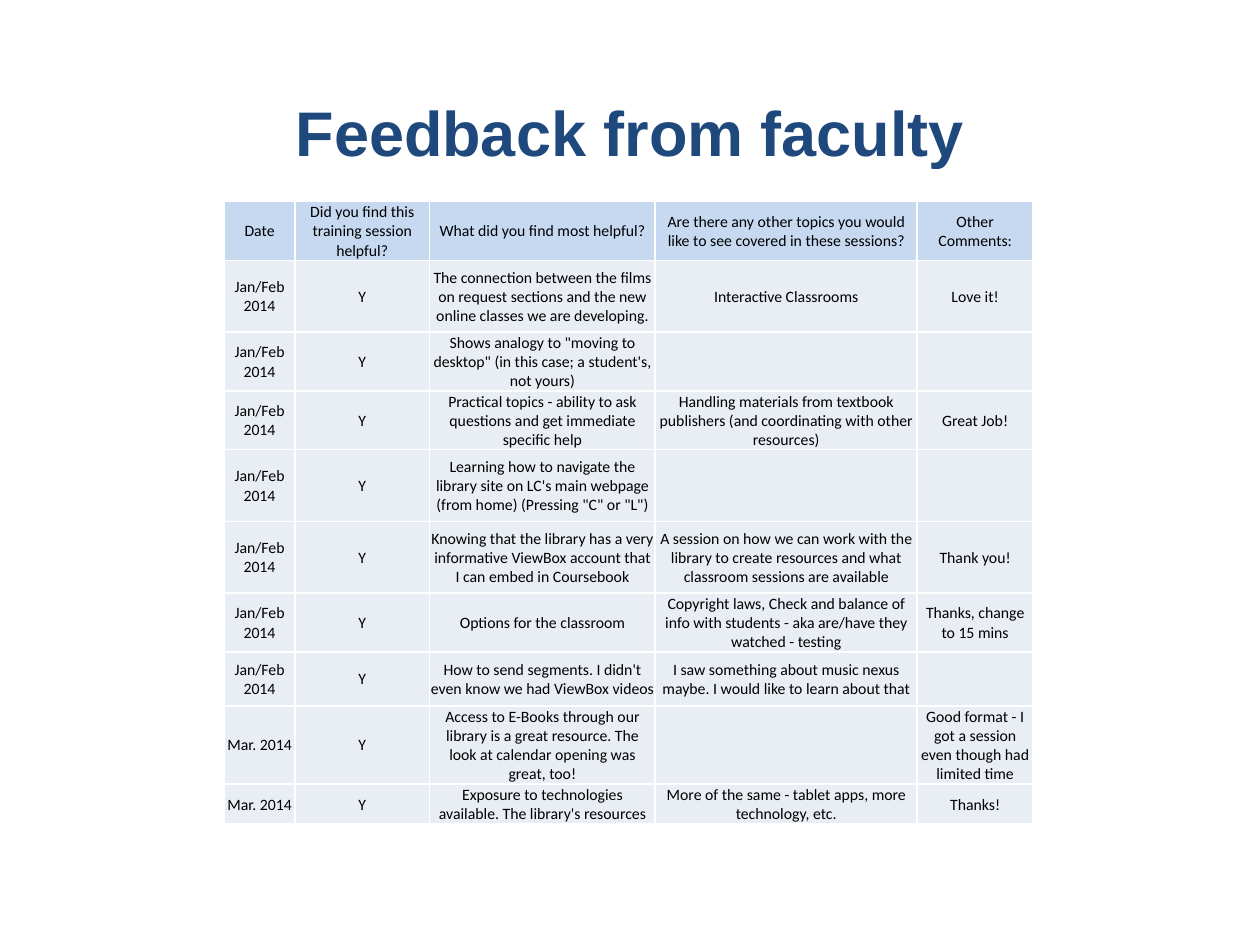
from dataclasses import dataclass

from lxml.etree import SubElement
from pptx import Presentation
from pptx.dml.color import RGBColor
from pptx.enum.text import MSO_ANCHOR, PP_ALIGN
from pptx.oxml.ns import qn
from pptx.slide import Slide
from pptx.util import Inches, Pt

HEADINGS = [
    "Date",
    "Did you find this training session helpful?",
    "What did you find most helpful?",
    "Are there any other topics you would like to see covered in these sessions?",
    "Other Comments:",
]
WINTER, SPRING = "Jan/Feb 2014", "Mar. 2014"
RESPONSES = [
    (WINTER, "The connection between the films on request sections and the new online classes we are developing.",
     "Interactive Classrooms", "Love it!"),
    (WINTER, "Shows analogy to \"moving to desktop\" (in this case; a student's, not yours)", "", ""),
    (WINTER, "Practical topics - ability to ask questions and get immediate specific help",
     "Handling materials from textbook publishers (and coordinating with other resources)", "Great Job!"),
    (WINTER, "Learning how to navigate the library site on LC's main webpage (from home) (Pressing \"C\" or \"L\")",
     "", ""),
    (WINTER, "Knowing that the library has a very informative ViewBox account that I can embed in Coursebook",
     "A session on how we can work with the library to create resources and what classroom sessions are available",
     "Thank you!"),
    (WINTER, "Options for the classroom",
     "Copyright laws, Check and balance of info with students - aka are/have they watched - testing",
     "Thanks, change to 15 mins"),
    (WINTER, "How to send segments. I didn't even know we had ViewBox videos",
     "I saw something about music nexus maybe. I would like to learn about that", ""),
    (SPRING, "Access to E-Books through our library is a great resource. The look at calendar opening was great, too!",
     "", "Good format - I got a session even though had limited time"),
    (SPRING, "Exposure to technologies available. The library's resources",
     "More of the same - tablet apps, more technology, etc.", "Thanks!"),
]
COLUMN_WIDTHS = [5.6, 10.7, 17.9, 20.8, 9.2]
ROW_HEIGHTS = [4.4, 5.7, 4.3, 4.3, 5.7, 5.7, 4.3, 4.3, 5.7, 3.2]


def color(value):
    return RGBColor.from_string(value)


def grid(units):
    return Inches(units / 10)


@dataclass
class FeedbackPage:
    """Style and drawing methods for a slide on a grid of 100 columns by 75 rows."""

    page: Slide
    title_font: str = "Arial"
    table_font: str = "Calibri"
    title_color: str = "1F497D"
    text_color: str = "000000"
    header_fill: str = "C6D9F1"
    body_fill: str = "E9EDF4"
    border_color: str = "FFFFFF"

    def format_text(self, frame, font, size, value, bold=False):
        frame.vertical_anchor = MSO_ANCHOR.MIDDLE
        for paragraph in frame.paragraphs:
            paragraph.alignment = PP_ALIGN.CENTER
            for span in paragraph.runs:
                span.font.name = font
                span.font.size = Pt(size)
                span.font.bold = bold
                span.font.color.rgb = color(value)

    def title(self, text, left, top, width, height):
        box = self.page.shapes.title
        box.left, box.top = grid(left), grid(top)
        box.width, box.height = grid(width), grid(height)
        box.text_frame.text = text
        self.format_text(box.text_frame, self.title_font, 36, self.title_color, bold=True)

    def border(self, cell):
        properties = cell._tc.get_or_add_tcPr()
        for side in ("lnL", "lnR", "lnT", "lnB"):
            line = SubElement(properties, qn(f"a:{side}"), w=str(Pt(1)))
            fill = SubElement(line, qn("a:solidFill"))
            SubElement(fill, qn("a:srgbClr"), val=self.border_color)

    def cell(self, cell, text, fill):
        self.border(cell)
        cell.fill.solid()
        cell.fill.fore_color.rgb = color(fill)
        cell.margin_left = cell.margin_right = cell.margin_top = Inches(0.01)
        cell.margin_bottom = 0
        cell.text_frame.text = text
        self.format_text(cell.text_frame, self.table_font, 9, self.text_color)
        cell.vertical_anchor = MSO_ANCHOR.MIDDLE

    def table(self, records, left, top, widths, heights):
        table = self.page.shapes.add_table(
            len(heights), len(widths), grid(left), grid(top), grid(sum(widths)), grid(sum(heights))
        ).table
        table.first_row = table.horz_banding = False
        for column, width in zip(table.columns, widths):
            column.width = grid(width)
        for index, (row, height, record) in enumerate(zip(table.rows, heights, records)):
            row.height = grid(height)
            fill = self.body_fill if index else self.header_fill
            for cell, text in zip(row.cells, record):
                self.cell(cell, text, fill)


def main():
    deck = Presentation()
    deck.slide_width, deck.slide_height = Inches(10), Inches(7.5)
    feedback = FeedbackPage(deck.slides.add_slide(deck.slide_layouts[5]))
    feedback.title("Feedback from faculty", 5, 4.2, 90, 12.5)
    answers = [(date, "Y", *comments) for date, *comments in RESPONSES]
    feedback.table([HEADINGS, *answers], 17.8, 16, COLUMN_WIDTHS, ROW_HEIGHTS)
    deck.save("out.pptx")


if __name__ == "__main__":
    main()
